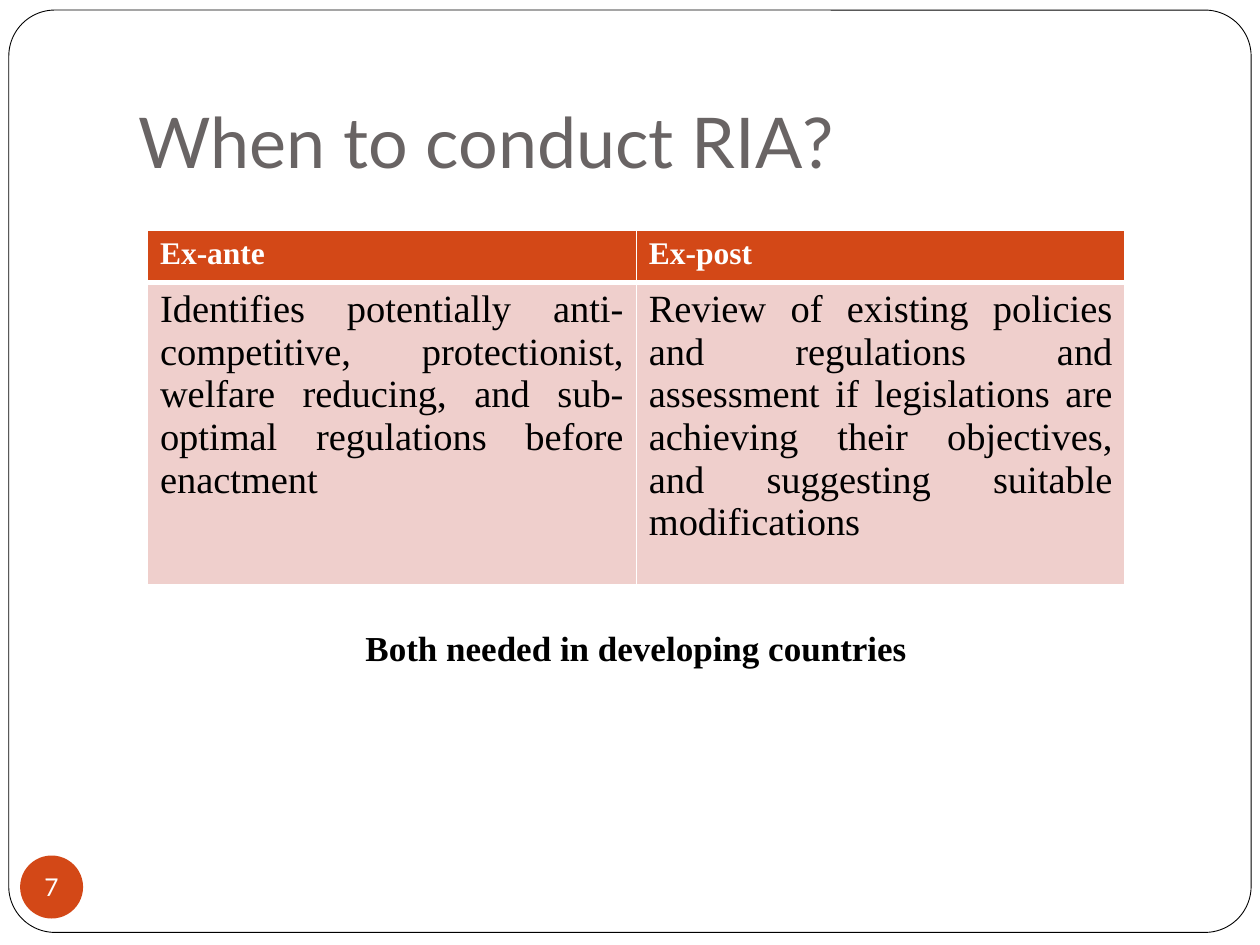
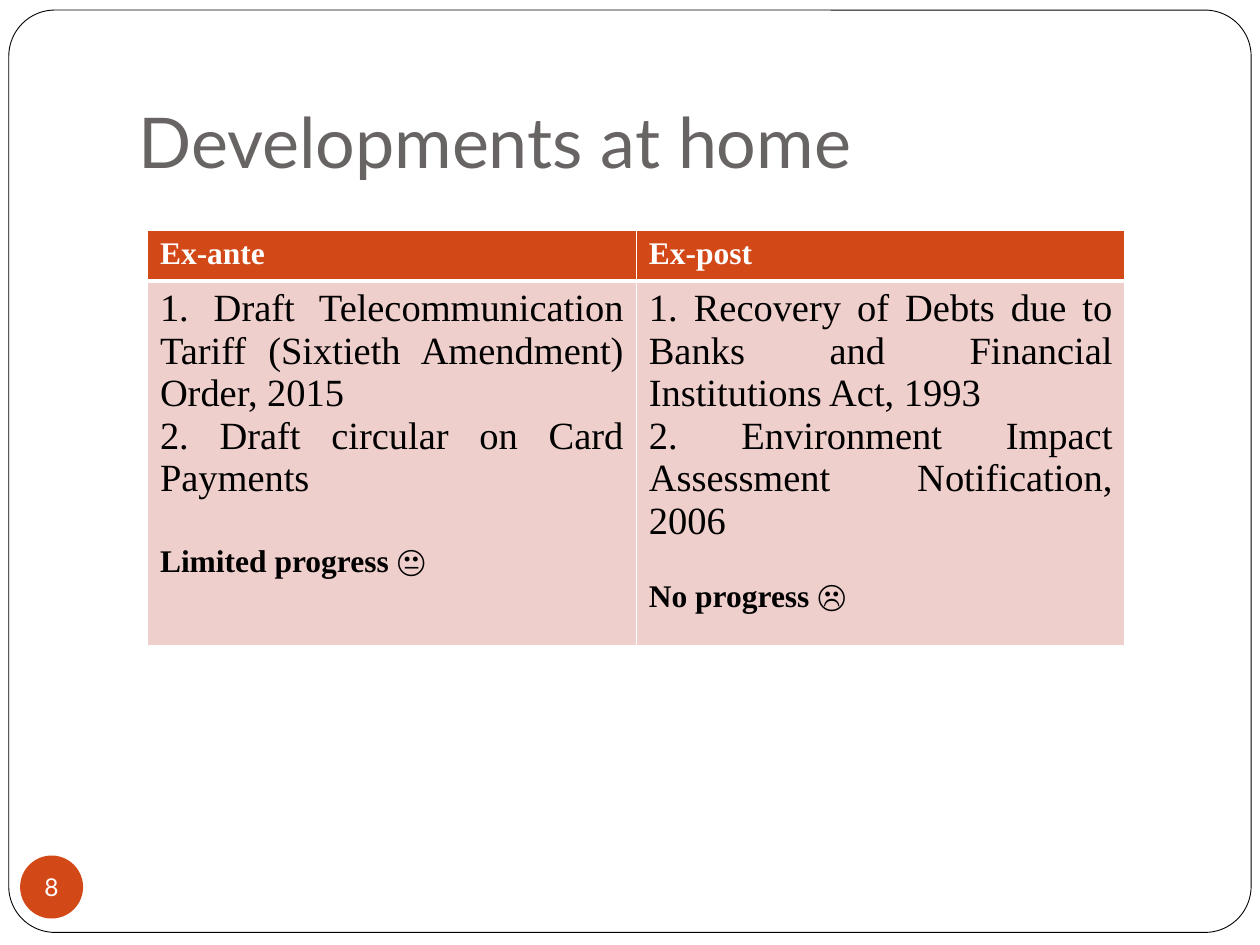
from lxml.etree import SubElement
from pptx import Presentation
from pptx.dml.color import RGBColor
from pptx.enum.shapes import MSO_SHAPE
from pptx.enum.text import MSO_ANCHOR, PP_ALIGN
from pptx.oxml.ns import qn
from pptx.util import Inches, Pt

SANS, SERIF = "Lato", "Times New Roman"
RED, PINK, GREY = "D34817", "EFCFCC", "696464"
WHITE, BLACK = "FFFFFF", "000000"
HEADS = ["Ex-ante", "Ex-post"]
LEFT, TOP, COL = 1.17, 1.83, 3.88

# Body paragraphs: (text, size, bold, space before)
SLIDES = [
    {
        "title": "When to conduct RIA?",
        "page": 7,
        "rows": (0.41, 2.4),
        "body": [
            [("Identifies potentially anti-competitive, protectionist, welfare "
              "reducing, and sub-optimal regulations before enactment", 22, False, 0)],
            [("Review of existing policies and regulations and assessment if "
              "legislations are achieving their objectives, and suggesting "
              "suitable modifications", 22, False, 0)],
        ],
        "note": "Both needed in developing countries",
    },
    {
        "title": "Developments at home",
        "page": 8,
        "rows": (0.37, 2.68),
        "body": [
            [("1. Draft Telecommunication Tariff (Sixtieth Amendment) Order, 2015",
              22, False, 0),
             ("2. Draft circular on Card Payments", 22, False, 0),
             ("Limited progress 😐", 18, True, 25)],
            [("1. Recovery of Debts due to Banks and Financial Institutions Act, 1993",
              22, False, 0),
             ("2. Environment Impact Assessment Notification, 2006", 22, False, 0),
             ("No progress ☹", 18, True, 21)],
        ],
    },
]


def rgb(code):
    return RGBColor.from_string(code)


def write(para, text, size, font, color, bold=False, align=PP_ALIGN.LEFT):
    para.alignment = align
    run = para.add_run()
    run.text = text
    run.font.size, run.font.name, run.font.bold = Pt(size), font, bold
    run.font.color.rgb = rgb(color)


def inset(frame, left, top, right, bottom):
    frame.margin_left, frame.margin_top = Inches(left), Inches(top)
    frame.margin_right, frame.margin_bottom = Inches(right), Inches(bottom)


def draw(slide, kind, box, fill, line=None):
    shape = slide.shapes.add_shape(kind, *map(Inches, box))
    shape.shadow.inherit = False
    shape.fill.solid()
    shape.fill.fore_color.rgb = rgb(fill)
    if line:
        shape.line.color.rgb = rgb(line)
        shape.line.width = Pt(0.5)
    else:
        shape.line.fill.background()
    return shape


def add_text(slide, box):
    frame = slide.shapes.add_textbox(*map(Inches, box)).text_frame
    frame.word_wrap = True
    return frame


def add_base(slide, title, page):
    # Rounded frame
    card = draw(slide, MSO_SHAPE.ROUNDED_RECTANGLE, (0.07, 0.08, 9.86, 7.32), WHITE, BLACK)
    card.adjustments[0] = 0.05
    # Title
    frame = add_text(slide, (1, 0.3, 8.5, 1.25))
    frame.vertical_anchor = MSO_ANCHOR.BOTTOM
    inset(frame, 0.1, 0.05, 0.1, 0.1)
    write(frame.paragraphs[0], title, 40, SANS, GREY)
    # Page badge
    frame = draw(slide, MSO_SHAPE.OVAL, (0.16, 6.79, 0.5, 0.5), RED).text_frame
    frame.word_wrap = False
    frame.vertical_anchor = MSO_ANCHOR.MIDDLE
    inset(frame, 0, 0, 0, 0)
    write(frame.paragraphs[0], str(page), 14, SANS, WHITE, align=PP_ALIGN.CENTER)


def style(cell, fill, thick):
    # White borders, with a thick rule between header and body
    props = cell._tc.get_or_add_tcPr()
    for side in ("lnL", "lnR", "lnT", "lnB"):
        width = Pt(3 if side == thick else 1)
        edge = SubElement(props, qn("a:" + side), w=str(width))
        paint = SubElement(edge, qn("a:solidFill"))
        SubElement(paint, qn("a:srgbClr"), val=WHITE)
    cell.fill.solid()
    cell.fill.fore_color.rgb = rgb(fill)


def add_grid(slide, rows, body):
    box = (LEFT, TOP, COL * len(HEADS), sum(rows))
    table = slide.shapes.add_table(len(rows), len(HEADS), *map(Inches, box)).table
    table.horz_banding = False
    for row, high in zip(table.rows, rows):
        row.height = Inches(high)
    for c, (head, paras) in enumerate(zip(HEADS, body)):
        table.columns[c].width = Inches(COL)
        parts = [([(head, 18, True, 0)], RED, WHITE, "lnB"), (paras, PINK, BLACK, "lnT")]
        for r, (items, fill, color, thick) in enumerate(parts):
            cell = table.cell(r, c)
            style(cell, fill, thick)
            frame = cell.text_frame
            for i, (text, size, bold, gap) in enumerate(items):
                para = frame.add_paragraph() if i else frame.paragraphs[0]
                para.space_before = Pt(gap)
                write(para, text, size, SERIF, color, bold, PP_ALIGN.JUSTIFY)


def main():
    deck = Presentation()
    deck.slide_width, deck.slide_height = Inches(10), Inches(7.5)
    for data in SLIDES:
        slide = deck.slides.add_slide(deck.slide_layouts[6])
        add_base(slide, data["title"], data["page"])
        add_grid(slide, data["rows"], data["body"])
        # Closing remark
        if "note" in data:
            frame = add_text(slide, (LEFT, 4.92, COL * len(HEADS), 0.44))
            write(frame.paragraphs[0], data["note"], 20, SERIF, BLACK, True, PP_ALIGN.CENTER)
    deck.save("out.pptx")


if __name__ == "__main__":
    main()
